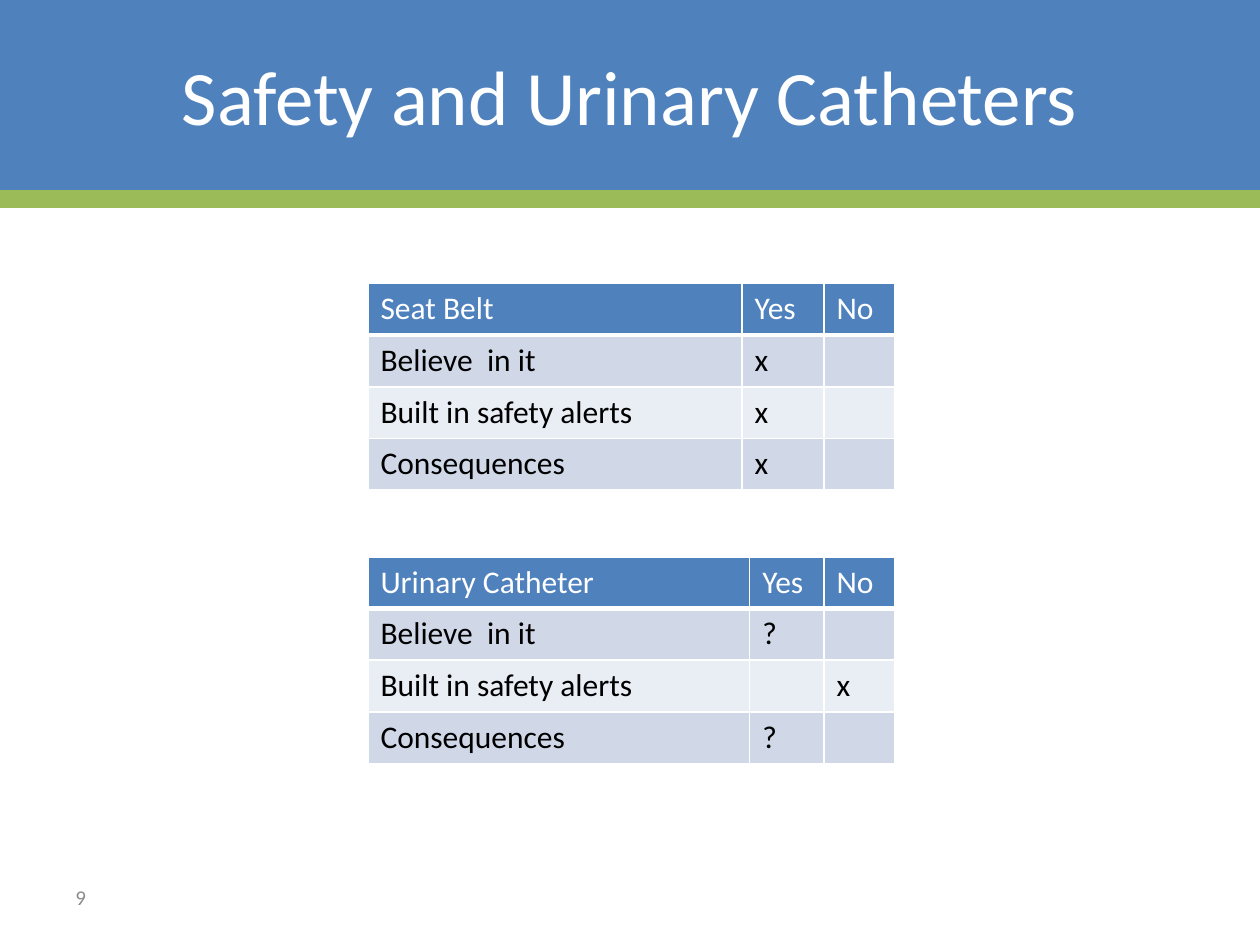
from dataclasses import dataclass

from lxml import etree
from pptx import Presentation
from pptx.dml.color import RGBColor
from pptx.enum import shapes, text
from pptx.oxml import ns
from pptx import util as u


@dataclass(frozen=True)
class Theme:
    font: str = "Calibri"
    blue: str = "4F81BD"
    green: str = "9BBB59"
    white: str = "FFFFFF"
    black: str = "000000"
    gray: str = "8C8C8C"
    bands: tuple = ("D0D8E8", "E9EDF4")
    title_size: int = 44
    table_size: int = 18
    number_size: int = 12


THEME = Theme()
SLIDE_WIDTH = 10
BAND_HEIGHT = 1.58
TABLE_LEFT = 2.92
ROW_HEIGHT = 0.41


def paint(fill, color):
    fill.solid()
    fill.fore_color.rgb = RGBColor.from_string(color)


def add_run(para, words, size, color):
    span = para.add_run()
    span.text = words
    span.font.name = THEME.font
    span.font.size = u.Pt(size)
    span.font.color.rgb = RGBColor.from_string(color)


def add_band(page):
    """Draw the title background and the rule along its lower edge."""
    band = page.shapes.add_shape(
        shapes.MSO_SHAPE.RECTANGLE, 0, 0, u.Inches(SLIDE_WIDTH), u.Inches(BAND_HEIGHT))
    band.shadow.inherit = False
    paint(band.fill, THEME.blue)
    band.line.fill.background()

    rule = page.shapes.add_connector(
        shapes.MSO_CONNECTOR.STRAIGHT, 0, u.Inches(BAND_HEIGHT),
        u.Inches(SLIDE_WIDTH), u.Inches(BAND_HEIGHT))
    rule.line.width = u.Pt(10)
    rule.line.color.rgb = RGBColor.from_string(THEME.green)
    etree.SubElement(rule._element.spPr, ns.qn("a:effectLst"))


def add_text(page, words, place, size, color, align):
    box = page.shapes.add_textbox(*map(u.Inches, place))
    frame = box.text_frame
    frame.word_wrap = True
    frame.vertical_anchor = text.MSO_ANCHOR.MIDDLE
    para = frame.paragraphs[0]
    para.alignment = align
    add_run(para, words, size, color)


def set_borders(cell, bottom):
    """Give a cell white edges; call before its fill is set."""
    properties = cell._tc.get_or_add_tcPr()
    for side, width in (("L", 1), ("R", 1), ("T", 1), ("B", bottom)):
        edge = etree.SubElement(
            properties, ns.qn(f"a:ln{side}"), w=str(u.Pt(width)))
        fill = etree.SubElement(edge, ns.qn("a:solidFill"))
        etree.SubElement(fill, ns.qn("a:srgbClr"), val=THEME.white)


def add_checklist(page, top, widths, rows):
    frame = page.shapes.add_table(
        len(rows), len(widths), u.Inches(TABLE_LEFT), u.Inches(top),
        u.Inches(sum(widths)), u.Inches(ROW_HEIGHT * len(rows)))
    table = frame.table
    for column, width in zip(table.columns, widths):
        column.width = u.Inches(width)
    for r, row in enumerate(rows):
        table.rows[r].height = u.Inches(ROW_HEIGHT)
        header = r == 0
        fill = THEME.blue if header else THEME.bands[(r - 1) % 2]
        color = THEME.white if header else THEME.black
        for c, words in enumerate(row):
            cell = table.cell(r, c)
            set_borders(cell, 3 if header else 1)
            paint(cell.fill, fill)
            if words:
                add_run(cell.text_frame.paragraphs[0], words, THEME.table_size, color)


def main():
    deck = Presentation()
    deck.slide_width, deck.slide_height = u.Inches(SLIDE_WIDTH), u.Inches(7.5)
    page = deck.slides.add_slide(deck.slide_layouts[6])

    add_band(page)
    add_text(page, "Safety and Urinary Catheters", (0, 0, SLIDE_WIDTH, 1.5),
             THEME.title_size, THEME.white, text.PP_ALIGN.CENTER)
    add_text(page, "9", (0.5, 6.92, 2.33, 0.4),
             THEME.number_size, THEME.gray, text.PP_ALIGN.LEFT)

    questions = ("Believe  in it", "Built in safety alerts", "Consequences")
    checklists = (
        ("Seat Belt", 2.25, (2.97, 0.65, 0.56), (("x", ""), ("x", ""), ("x", ""))),
        ("Urinary Catheter", 4.42, (3.03, 0.59, 0.56), (("?", ""), ("", "x"), ("?", ""))),
    )
    for subject, top, widths, answers in checklists:
        rows = [(subject, "Yes", "No")]
        rows += [(question, *marks) for question, marks in zip(questions, answers)]
        add_checklist(page, top, widths, rows)

    deck.save("out.pptx")


if __name__ == "__main__":
    main()
